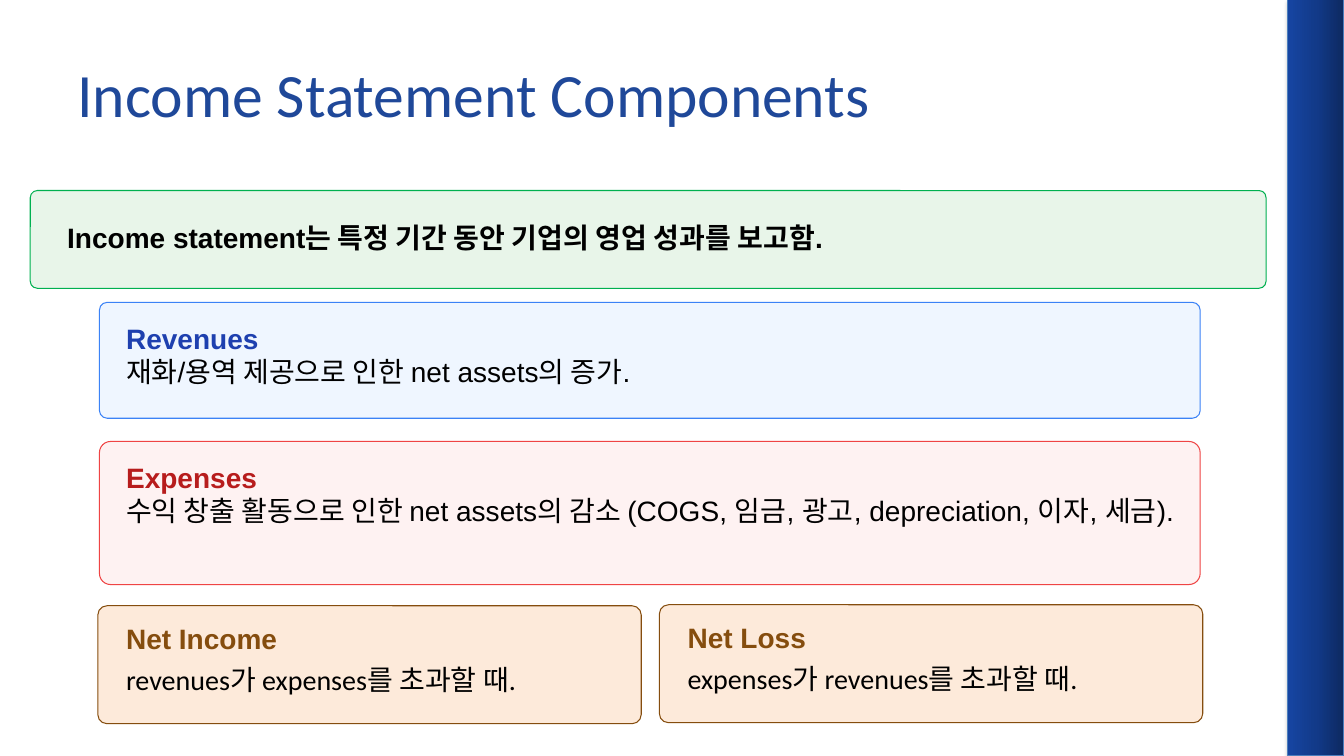
from copy import deepcopy
from pptx import Presentation
from pptx.dml.color import RGBColor
from pptx.enum.shapes import MSO_SHAPE
from pptx.enum.text import MSO_ANCHOR, PP_ALIGN
from pptx.oxml import parse_xml
from pptx.oxml.ns import nsdecls, qn
from pptx.util import Inches, Pt

BLACK = RGBColor(0, 0, 0)
NAVY = RGBColor(0x1F, 0x48, 0x99)
EDGE = RGBColor(0x4B, 0x7E, 0xBC)
SHADES = [RGBColor(0x0D, 0x29, 0x60), RGBColor(0x12, 0x3A, 0x89), RGBColor(0x16, 0x45, 0xA2)]
MINT, GREEN = RGBColor(0xE8, 0xF5, 0xE9), RGBColor(0x00, 0xB0, 0x50)
ICE, BLUE, INK = RGBColor(0xEF, 0xF6, 0xFF), RGBColor(0x3B, 0x82, 0xF6), RGBColor(0x1E, 0x40, 0xAF)
ROSE, RED, WINE = RGBColor(0xFE, 0xF2, 0xF2), RGBColor(0xEF, 0x44, 0x44), RGBColor(0xB7, 0x1C, 0x1C)
SAND, BROWN = RGBColor(0xFD, 0xEA, 0xDA), RGBColor(0x85, 0x4D, 0x0E)


class Deck:
    """One slide on a grid of 100 columns by 100 rows."""

    def __init__(self):
        self.show = Presentation()
        self.show.slide_width, self.show.slide_height = Inches(13.33), Inches(7.5)
        self.slide = self.show.slides.add_slide(self.show.slide_layouts[5])
        self.size = 20
        self.sans, self.head = "Arial", "Calibri"

    def place(self, x, y, w, h):
        col, row = self.show.slide_width / 100, self.show.slide_height / 100
        return int(x * col), int(y * row), int(w * col), int(h * row)

    def style(self, para, size, face, color, bold=False):
        for run in para.runs:
            font = run.font
            font.size, font.name, font.bold = Pt(size), face, bold
            font.color.rgb = color

    def title(self, text, *area):
        box = self.slide.shapes.title
        box.left, box.top, box.width, box.height = self.place(*area)
        frame = box.text_frame
        frame.text = text
        frame.vertical_anchor = MSO_ANCHOR.MIDDLE
        frame.paragraphs[0].alignment = PP_ALIGN.LEFT
        self.style(frame.paragraphs[0], 44, self.head, NAVY)

    def shape(self, kind, line, *area):
        item = self.slide.shapes.add_shape(kind, *self.place(*area))
        item.shadow.inherit = False
        item.line.color.rgb = line
        item.line.width = Pt(0.75)
        return item

    def bar(self, *area):
        item = self.shape(MSO_SHAPE.RECTANGLE, EDGE, *area)
        item.fill.gradient()
        item.fill.gradient_angle = 180
        props = item._element.spPr
        stops = props.find(qn("a:gradFill")).find(qn("a:gsLst"))
        stops.insert(1, deepcopy(stops[0]))
        for i, (stop, shade) in enumerate(zip(item.fill.gradient_stops, SHADES)):
            stop.position = i / 2
            stop.color.rgb = shade
        props.find(qn("a:effectLst")).append(parse_xml(
            f'<a:outerShdw {nsdecls("a")} blurRad="39370" dist="22860" dir="5400000" rotWithShape="0">'
            '<a:srgbClr val="000000"><a:alpha val="35000"/></a:srgbClr></a:outerShdw>'))

    def panel(self, fill, line, curve, *area):
        item = self.shape(MSO_SHAPE.ROUNDED_RECTANGLE, line, *area)
        item.adjustments[0] = curve
        item.fill.solid()
        item.fill.fore_color.rgb = fill

    def text(self, rows, area, lead=None, after=None):
        """Each row holds its words, face, colour and weight."""
        frame = self.slide.shapes.add_textbox(*self.place(*area)).text_frame
        frame.word_wrap = True
        frame.margin_left = frame.margin_right = frame.margin_top = frame.margin_bottom = 0
        frame.text = "\n".join(row[0] for row in rows)
        for para, (_, face, color, bold) in zip(frame.paragraphs, rows):
            if lead:
                para.line_spacing = Pt(lead)
            if after:
                para.space_after = Pt(after)
            self.style(para, self.size, face, color, bold)

    def card(self, name, note, look, area, inset, face, lead=None, after=None):
        fill, line, ink, curve = look
        self.panel(fill, line, curve, *area)
        x, y, w, h = area
        dx, dy, cut, low = inset
        rows = [(name, self.sans, ink, True), (note, face, BLACK, False)]
        self.text(rows, (x + dx, y + dy, w - cut, h - low), lead, after)


def main():
    deck = Deck()

    # Side bar and title
    deck.bar(95.83, 0, 4.17, 100)
    deck.title("Income Statement Components", 5, 4, 90, 16.67)

    # Lead statement
    deck.panel(MINT, GREEN, 0.073, 2.25, 25.2, 91.95, 12.93)
    deck.text([("Income statement는 특정 기간 동안 기업의 영업 성과를 보고함.", deck.sans, BLACK, True)],
              (5, 28.93, 90.3, 6.4), lead=25)

    # Wide cards
    for name, note, look, top, high in [
        ("Revenues", "재화/용역 제공으로 인한 net assets의 증가.", (ICE, BLUE, INK, 0.067), 40, 15.33),
        ("Expenses", "수익 창출 활동으로 인한 net assets의 감소 (COGS, 임금, 광고, depreciation, 이자, 세금).",
         (ROSE, RED, WINE, 0.078), 58.4, 18.93),
    ]:
        deck.card(name, note, look, (7.4, top, 81.9, high), (1.98, 2.5, 3.3, 5.2), deck.sans)

    # Result cards
    for name, note, left, top in [
        ("Net Income", "revenues가 expenses를 초과할 때.", 7.28, 80.13),
        ("Net Loss", "expenses가 revenues를 초과할 때.", 49.06, 80),
    ]:
        deck.card(name, note, (SAND, BROWN, BROWN, 0.078), (left, top, 40.43, 15.6),
                  (2.1, 2.67, 2.33, 2.67), deck.head, lead=21, after=8)

    deck.show.save("out.pptx")


if __name__ == "__main__":
    main()
